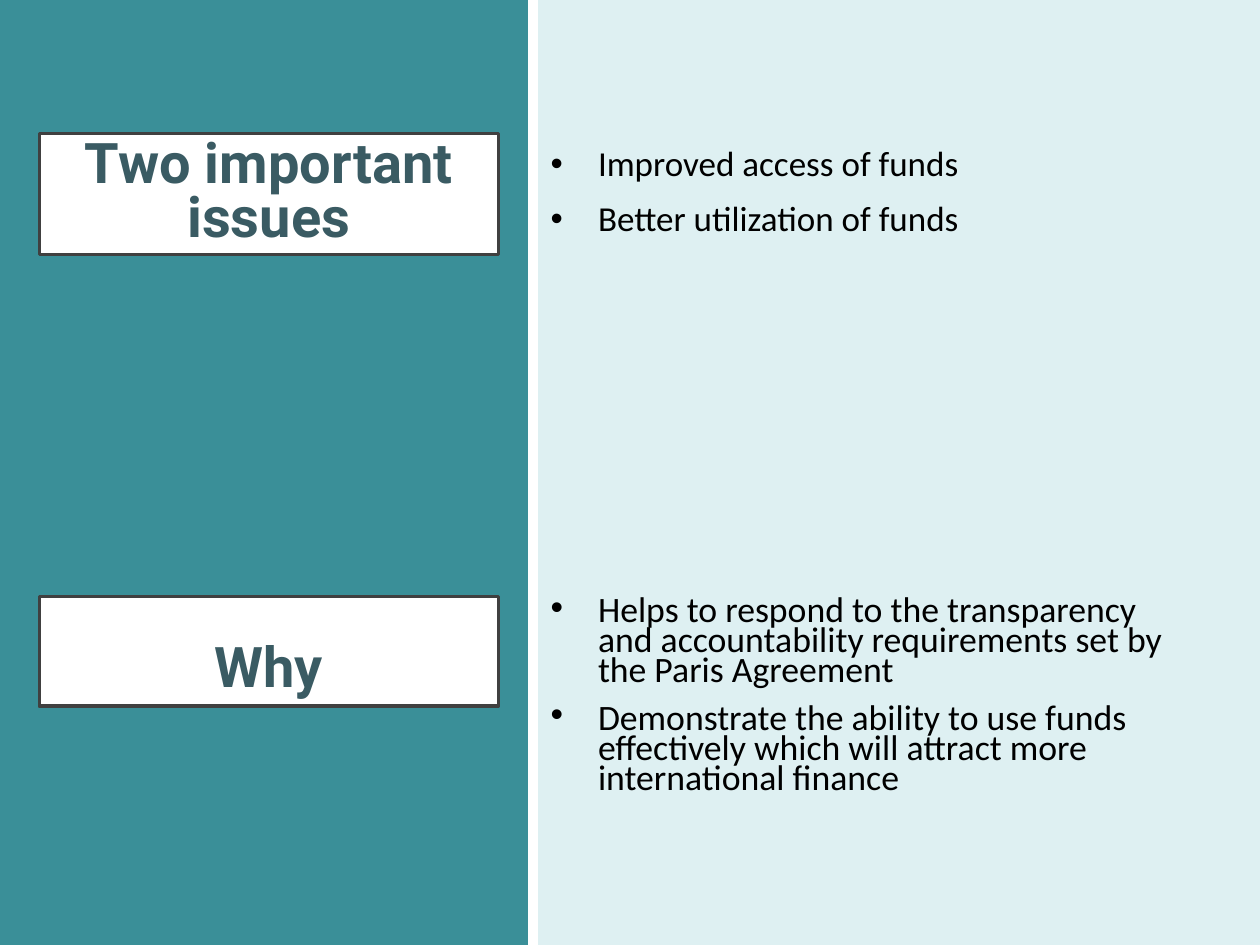
import pptx
import pptx.dml.color
import pptx.enum.shapes
import pptx.enum.text
import pptx.oxml
import pptx.oxml.ns
import pptx.util

Pt = pptx.util.Pt
RECTANGLE = pptx.enum.shapes.MSO_SHAPE.RECTANGLE
THEME = {
    "panel": "3A8F98", "content": "DEF0F2", "box": "FFFFFF", "border": "404040",
    "heading": "3A5B63", "body": "000000",
    "heading_font": "Roboto", "body_font": "Calibri",
    "heading_size": 32, "issues_size": 20, "reasons_size": 20.4,
}


def color(name):
    return pptx.dml.color.RGBColor.from_string(THEME[name])


def format_text(shape, role, size, spacing, anchor):
    frame = shape.text_frame
    frame.word_wrap = True
    frame.auto_size = pptx.enum.text.MSO_AUTO_SIZE.NONE
    frame.vertical_anchor = anchor
    for paragraph in frame.paragraphs:
        paragraph.line_spacing = spacing
        for run in paragraph.runs:
            run.font.name = THEME[role + "_font"]
            run.font.size = Pt(THEME[size])
            run.font.bold = role == "heading"
            run.font.color.rgb = color(role)


presentation = pptx.Presentation()
presentation.slide_width, presentation.slide_height = Pt(720), Pt(540)
slide = presentation.slides.add_slide(presentation.slide_layouts[3])
title, issues, reasons = slide.placeholders

# Background panels, kept behind the placeholders
content_left = 307.5
panels = [("content", content_left, 720 - content_left), ("panel", 0, 301.7)]
for position, (name, left, width) in enumerate(panels, start=2):
    panel = slide.shapes.add_shape(RECTANGLE, Pt(left), Pt(0), Pt(width), Pt(540))
    panel.shadow.inherit = False
    panel.fill.solid()
    panel.fill.fore_color.rgb = color(name)
    panel.line.fill.background()
    slide.shapes._spTree.insert(position, panel._element)

# Framed headings
why = slide.shapes.add_shape(RECTANGLE, 0, 0, 0, 0)
why.shadow.inherit = False
headings = [
    (title, "Two important issues", 76.2, 69.3, 0.8),
    (why, "Why", 341, 62.6, 0.9),
]
for shape, text, top, height, spacing in headings:
    shape.left, shape.top, shape.width, shape.height = Pt(22.5), Pt(top), Pt(262.3), Pt(height)
    shape.fill.solid()
    shape.fill.fore_color.rgb = color("box")
    shape.line.color.rgb = color("border")
    shape.line.width = Pt(2)
    shape.text_frame.text = text
    shape.text_frame.paragraphs[0].alignment = pptx.enum.text.PP_ALIGN.CENTER
    format_text(shape, "heading", "heading_size", spacing, pptx.enum.text.MSO_ANCHOR.BOTTOM)

# Bulleted lists
lists = [
    (issues, 80, 412.5, "issues_size", 0.9,
     ["Improved access of funds", "Better utilization of funds"]),
    (reasons, 338.4, 373, "reasons_size", 0.7,
     ["Helps to respond to the transparency and accountability requirements "
      "set by the Paris Agreement",
      "Demonstrate the ability to use funds effectively which will attract more "
      "international finance"]),
]
for shape, top, width, size, spacing, lines in lists:
    shape.left, shape.top, shape.width, shape.height = Pt(content_left), Pt(top), Pt(width), Pt(130.3)
    shape.text_frame.text = "\n".join(lines)
    format_text(shape, "body", size, spacing, pptx.enum.text.MSO_ANCHOR.TOP)
    for paragraph in shape.text_frame.paragraphs:
        paragraph.space_before = Pt(10)
        properties = paragraph._p.get_or_add_pPr()
        properties.set("marL", str(Pt(27)))
        properties.set("indent", str(Pt(-27)))
        bullet = pptx.oxml.parse_xml(
            f'<a:buChar {pptx.oxml.ns.nsdecls("a")} char="•"/>')
        properties.append(bullet)

presentation.save("out.pptx")
